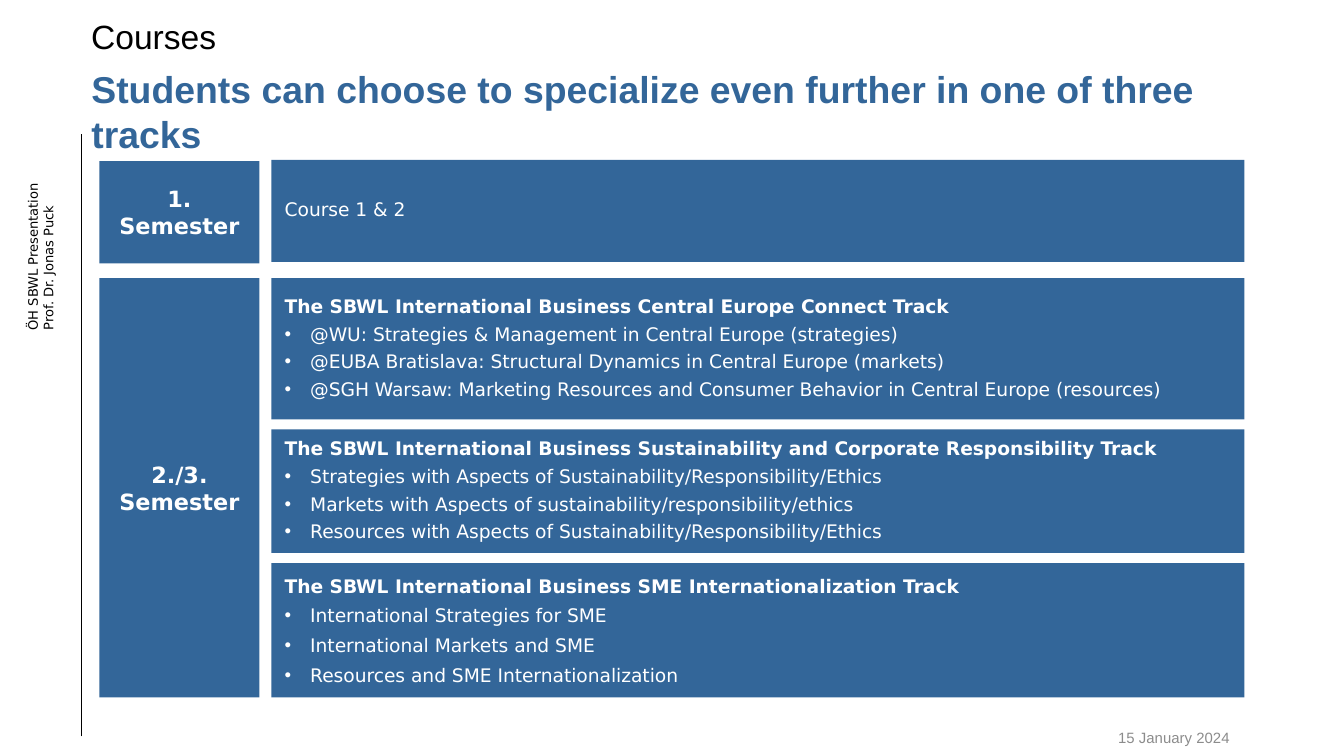
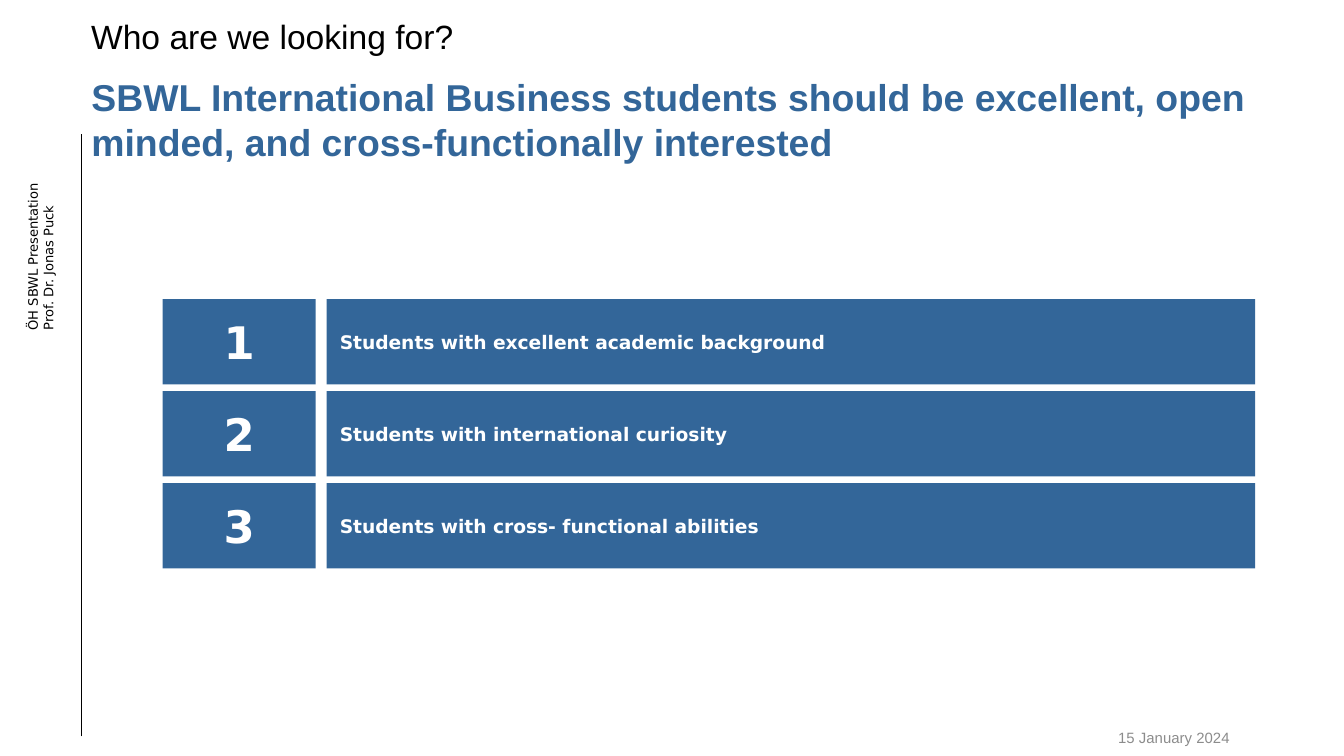
from dataclasses import dataclass

from lxml.etree import SubElement
from pptx import Presentation
from pptx.dml.color import RGBColor as Color
from pptx.enum.shapes import MSO_CONNECTOR as Connector, MSO_SHAPE as Preset
from pptx.enum.text import MSO_ANCHOR as Anchor, MSO_AUTO_SIZE as AutoSize, PP_ALIGN as Align
from pptx.oxml.ns import qn
from pptx.util import Inches, Pt

COLUMNS, ROWS = 100, 56.25
TITLE_ONLY = 5


@dataclass(frozen=True)
class Theme:
    # Colours
    blue = Color(0x33, 0x66, 0x99)
    black = Color(0, 0, 0)
    white = Color(0xFF, 0xFF, 0xFF)
    grey = Color(0x8C, 0x8C, 0x8C)
    # Fonts
    heading_font = "Arial"
    body_font = "DejaVu Sans"
    # Type sizes
    title = 20
    kicker = 18
    number = 24
    label = 12
    body = 10
    date = 8
    margin_note = 7
    # Paragraphs
    space_after = 3.9
    bullet_indent = 0.19


class Deck:
    """Holds the theme and the current slide; lengths are grid columns and rows."""

    def __init__(self, theme):
        self.theme = theme
        self.presentation = Presentation()
        self.presentation.slide_width = Inches(10)
        self.presentation.slide_height = Inches(5.625)
        self.slide = None

    def place(self, left, top, width, height):
        column = self.presentation.slide_width / COLUMNS
        row = self.presentation.slide_height / ROWS
        return round(left * column), round(top * row), round(width * column), round(height * row)

    def set_text(self, text_frame, lines, size, color, font, bold=False,
                 align=Align.LEFT, anchor=Anchor.MIDDLE):
        text_frame.text = "\n".join(lines)
        text_frame.word_wrap = True
        text_frame.auto_size = AutoSize.NONE
        text_frame.vertical_anchor = anchor
        for paragraph in text_frame.paragraphs:
            paragraph.alignment = align
            for run in paragraph.runs:
                run.font.size = Pt(size)
                run.font.name = font
                run.font.bold = bold
                run.font.color.rgb = color

    def new_slide(self, kicker, title, title_top):
        theme = self.theme
        layout = self.presentation.slide_layouts[TITLE_ONLY]
        self.slide = self.presentation.slides.add_slide(layout)
        # Margin line and rotated note
        self.line(6.1, 54.8, 6.1, 10)
        note = self.text(-4.7, 16.1, 15.5, 3.4,
                         ["ÖH SBWL Presentation", "Prof. Dr. Jonas Puck"],
                         theme.margin_note, theme.black, theme.body_font, anchor=Anchor.TOP)
        note.rotation = 270
        # Date
        self.text(69.2, 53.7, 23.3, 2.4, ["15 January 2024"],
                  theme.date, theme.grey, theme.heading_font, align=Align.RIGHT)
        # Headings
        heading = self.slide.shapes.title
        heading.left, heading.top, heading.width, heading.height = self.place(
            5.8, title_top, 91.9, 3.8)
        self.set_text(heading.text_frame, [title], theme.title, theme.blue,
                      theme.heading_font, bold=True, anchor=Anchor.TOP)
        self.text(5.8, 1.5, 60.3, 2.4, [kicker], theme.kicker, theme.black, theme.heading_font)

    def line(self, start_x, start_y, end_x, end_y):
        connector = self.slide.shapes.add_connector(
            Connector.STRAIGHT, *self.place(start_x, start_y, end_x, end_y))
        connector.line.color.rgb = self.theme.black
        connector.line.width = Pt(0.5)
        SubElement(connector._element.spPr, qn("a:effectLst"))

    def text(self, left, top, width, height, lines, size, color, font, **style):
        shape = self.slide.shapes.add_textbox(*self.place(left, top, width, height))
        self.set_text(shape.text_frame, lines, size, color, font, **style)
        return shape

    def box(self, left, top, width, height, lines, size, **style):
        shape = self.slide.shapes.add_shape(
            Preset.RECTANGLE, *self.place(left, top, width, height))
        shape.shadow.inherit = False
        shape.fill.solid()
        shape.fill.fore_color.rgb = self.theme.blue
        shape.line.fill.background()
        self.set_text(shape.text_frame, lines, size, self.theme.white,
                      self.theme.body_font, **style)
        return shape

    def label(self, left, top, width, height, text, size):
        self.box(left, top, width, height, [text], size, bold=True, align=Align.CENTER)

    def course_box(self, left, top, width, height, heading, courses=(), spacing=0.9):
        shape = self.box(left, top, width, height, [heading, *courses], self.theme.body)
        first, *items = shape.text_frame.paragraphs
        first.runs[0].font.bold = bool(courses)
        for paragraph in (first, *items):
            paragraph.line_spacing = spacing
            paragraph.space_after = Pt(self.theme.space_after)
        for paragraph in items:
            self.bullet(paragraph)

    def bullet(self, paragraph):
        indent = Inches(self.theme.bullet_indent)
        properties = paragraph._p.get_or_add_pPr()
        properties.set("marL", str(indent))
        properties.set("indent", str(-indent))
        SubElement(properties, qn("a:buFont"), typeface="Arial")
        SubElement(properties, qn("a:buChar"), char="•")


def courses_slide(deck):
    deck.new_slide("Courses",
                   "Students can choose to specialize even further in one of three tracks", 4.4)
    label_left, label_width = 7.4, 11.9
    left, width = 20.2, 72.4
    tracks_top, tracks_height, gap = 20.7, 31.2, 0.75

    # Semesters
    deck.label(label_left, 12, label_width, 7.6, "1. Semester", deck.theme.label)
    deck.label(label_left, tracks_top, label_width, tracks_height,
               "2./3. Semester", deck.theme.label)
    deck.course_box(left, 11.9, width, 7.6, "Course 1 & 2")

    # Tracks: height, line spacing, heading, courses
    tracks = [
        (10.5, 0.9, "The SBWL International Business Central Europe Connect Track",
         ["@WU: Strategies & Management in Central Europe (strategies)",
          "@EUBA Bratislava: Structural Dynamics in Central Europe (markets)",
          "@SGH Warsaw: Marketing Resources and Consumer Behavior in Central Europe (resources)"]),
        (9.2, 0.9,
         "The SBWL International Business Sustainability and Corporate Responsibility Track",
         ["Strategies with Aspects of Sustainability/Responsibility/Ethics",
          "Markets with Aspects of sustainability/responsibility/ethics",
          "Resources with Aspects of Sustainability/Responsibility/Ethics"]),
        (10, 1.0, "The SBWL International Business SME Internationalization Track",
         ["International Strategies for SME",
          "International Markets and SME",
          "Resources and SME Internationalization"]),
    ]
    top = tracks_top
    for height, spacing, heading, courses in tracks:
        deck.course_box(left, top, width, height, heading, courses, spacing)
        top += height + gap


def profile_slide(deck):
    deck.new_slide("Who are we looking for?",
                   "SBWL International Business students should be excellent, open minded, "
                   "and cross-functionally interested", 5)
    first_top, step, height = 22.25, 6.85, 6.35
    qualities = ["Students with excellent academic background",
                 "Students with international curiosity",
                 "Students with cross- functional abilities"]
    # Numbered qualities
    for index, quality in enumerate(qualities):
        top = first_top + index * step
        deck.label(12.1, top, 11.4, height, str(index + 1), deck.theme.number)
        deck.box(24.3, top, 69.1, height, [quality], deck.theme.body, bold=True)


def main():
    deck = Deck(Theme())
    courses_slide(deck)
    profile_slide(deck)
    deck.presentation.save("out.pptx")


if __name__ == "__main__":
    main()
